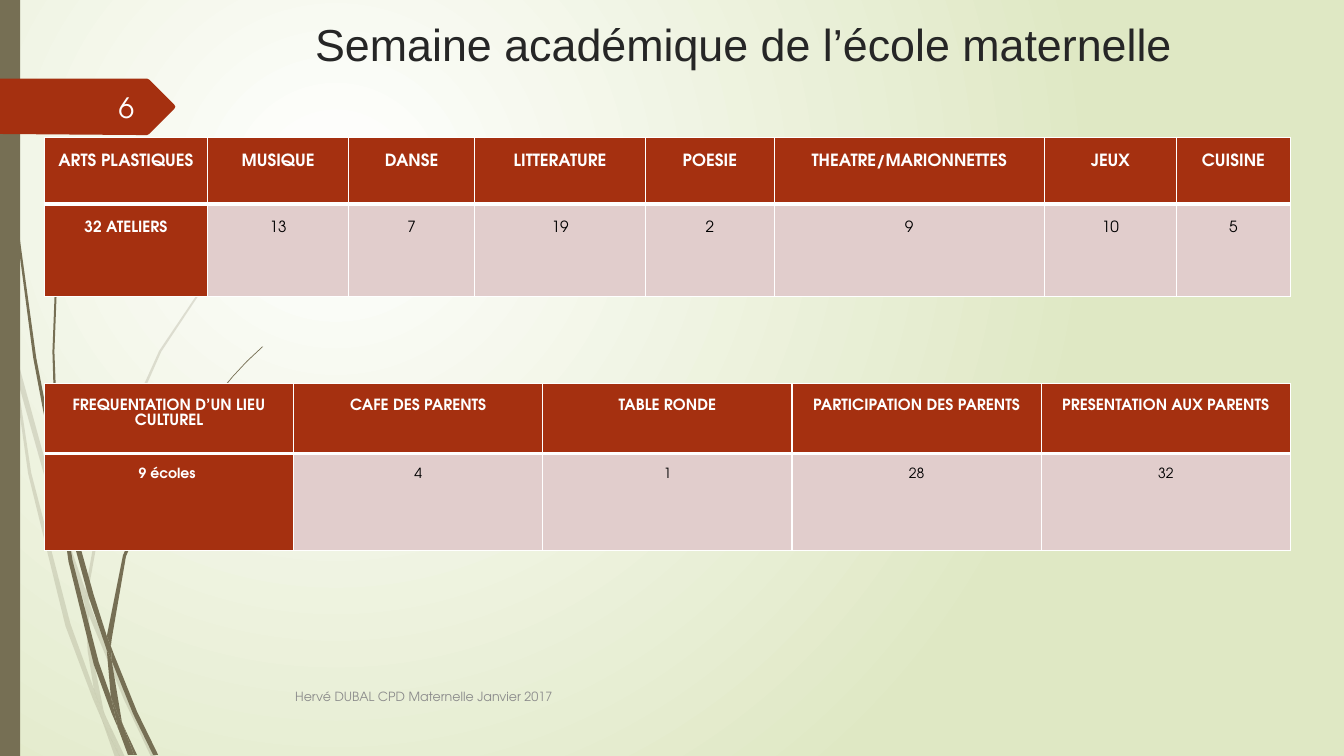
import pptx
import pptx.dml.color
import pptx.enum.shapes
import pptx.enum.text
import pptx.oxml
import pptx.oxml.ns
import pptx.util
from lxml import etree

Cm = pptx.util.Cm
Pt = pptx.util.Pt
RGBColor = pptx.dml.color.RGBColor
Shape = pptx.enum.shapes.MSO_SHAPE
Align = pptx.enum.text.PP_ALIGN
Anchor = pptx.enum.text.MSO_ANCHOR
qn = pptx.oxml.ns.qn

WHITE = RGBColor(0xFF, 0xFF, 0xFF)
BLACK = RGBColor(0, 0, 0)
INK = RGBColor(0x26, 0x26, 0x26)
GREY = RGBColor(0x8C, 0x8C, 0x8C)
RUST = RGBColor(0xA5, 0x30, 0x10)
ROSE = RGBColor(0xE1, 0xCD, 0xCC)
MOSS = RGBColor(0x76, 0x6F, 0x54)
LIME = RGBColor(0xDF, 0xE8, 0xC4)

FONT = "TeX Gyre Adventor"
STEP = Cm(0.0254)

# Outlines of the grass blades and the page tag, in units of STEP
PALE = [
    [(11, 350), (9, 322), (0, 282), (0, 299), (10, 344)],
    [(58, 522), (84, 599), (85, 586), (62, 520), (14, 345), (17, 376)],
    [(92, 607), (88, 596), (88, 610), (123, 694), (150, 751), (155, 751),
     (127, 692)],
    [(119, 751), (124, 751), (105, 711)],
    [(93, 683), (70, 619), (31, 469), (17, 376), (11, 350), (28, 470),
     (65, 621), (92, 693), (101, 714), (99, 707)],
    [(84, 599), (87, 646), (93, 683), (96, 692), (105, 711), (103, 706),
     (91, 646), (88, 610), (88, 608)],
    [(88, 584), (110, 462), (160, 349), (229, 245), (268, 198), (290, 175),
     (312, 154), (312, 153), (289, 175), (268, 197), (228, 244), (158, 348),
     (107, 461), (85, 584), (85, 586), (88, 596)],
    [(101, 714), (114, 751), (119, 751)],
    [(88, 608), (88, 610), (88, 596), (85, 586), (84, 599)],
    [(96, 692), (93, 683), (99, 707), (101, 714), (119, 751), (105, 711)],
]
DARK = [
    [(7, 110), (17, 233), (33, 355), (56, 477), (57, 481), (55, 457),
     (55, 453), (36, 355), (19, 232), (8, 109), (5, 48), (4, 0), (3, 0),
     (4, 48)],
    [(88, 592), (106, 645), (106, 633), (106, 631), (93, 590), (60, 472),
     (64, 505)],
    [(113, 649), (110, 641), (111, 656), (132, 708), (152, 749), (157, 749),
     (136, 706)],
    [(110, 691), (98, 657), (72, 556), (64, 505), (57, 477), (68, 557),
     (93, 659), (111, 708), (117, 722), (116, 717)],
    [(60, 472), (58, 453), (54, 349), (58, 245), (63, 193), (70, 141),
     (62, 193), (56, 245), (52, 349), (55, 449)],
    [(133, 749), (136, 749), (122, 719)],
    [(57, 477), (64, 505), (60, 472), (55, 449), (55, 453)],
    [(111, 633), (125, 552), (158, 476), (205, 406), (231, 374), (245, 359),
     (261, 344), (260, 344), (245, 358), (231, 373), (204, 405), (156, 474),
     (122, 551), (106, 631), (110, 641)],
    [(117, 722), (127, 749), (131, 749)],
    [(106, 645), (110, 691), (116, 706), (122, 719), (121, 716), (111, 656),
     (109, 651)],
    [(106, 645), (109, 651), (111, 656), (110, 641), (106, 631), (106, 633)],
    [(116, 706), (110, 691), (116, 717), (117, 722), (130, 749), (133, 749),
     (122, 719)],
]
TAG = [(173, 108), (148, 133), (146, 134), (136, 134), (0, 133), (0, 78),
       (136, 78), (146, 78), (148, 79), (173, 104), (174, 106)]

WORKS = [["ARTS PLASTIQUES", "MUSIQUE", "DANSE", "LITTERATURE", "POESIE",
          "THEATRE/MARIONNETTES", "JEUX", "CUISINE"],
         ["32 ATELIERS", "13", "7", "19", "2", "9", "10", "5"]]
MEETS = [["FREQUENTATION D’UN LIEU CULTUREL", "CAFE DES PARENTS",
          "TABLE RONDE", "PARTICIPATION DES PARENTS",
          "PRESENTATION AUX PARENTS"],
         ["9 écoles ", "4", "1", "28", "32"]]


def write(frame, text, size=12, color=BLACK, font=FONT, bold=False,
          align=Align.LEFT, lead=None):
    frame.word_wrap = True
    para = frame.paragraphs[0]
    para.alignment = align
    para.line_spacing = lead
    run = para.add_run()
    run.text = text
    run.font.size = Pt(size)
    run.font.name = font
    run.font.bold = bold
    run.font.color.rgb = color


class Deck:
    def __init__(self):
        self.show = pptx.Presentation()
        self.show.slide_width = Cm(33.87)
        self.show.slide_height = Cm(19.05)
        self.slide = self.show.slides.add_slide(self.show.slide_layouts[6])
        self.items = self.slide.shapes

    def glow(self, inner, outer):
        """Radial gradient on the slide background."""
        fill = self.slide.background.fill
        fill.gradient()
        for stop, color, place in zip(fill.gradient_stops, (inner, outer),
                                      (0, 1)):
            stop.color.rgb = color
            stop.position = place
        grad = self.slide.element.find(".//" + qn("a:gradFill"))
        grad.remove(grad.find(qn("a:lin")))
        ring = etree.SubElement(grad, qn("a:path"), {"path": "circle"})
        etree.SubElement(ring, qn("a:fillToRect"), {
            "l": "50000", "t": "50000", "r": "100000", "b": "100000"})

    def paint(self, shape, color, alpha=100):
        shape.shadow.inherit = False
        shape.fill.solid()
        shape.fill.fore_color.rgb = color
        shape.line.fill.background()
        if alpha < 100:
            tint = shape.fill._xPr.find(".//" + qn("a:srgbClr"))
            etree.SubElement(tint, qn("a:alpha"), val=str(alpha * 1000))

    def block(self, x, y, w, h, color):
        shape = self.items.add_shape(Shape.RECTANGLE, Cm(x), Cm(y), Cm(w),
                                     Cm(h))
        self.paint(shape, color)

    def outline(self, rim, color, alpha=100):
        pen = self.items.build_freeform(*rim[0], scale=STEP)
        pen.add_line_segments(rim[1:], close=True)
        self.paint(pen.convert_to_shape(), color, alpha)

    def label(self, text, x, y, w, h, anchor=Anchor.MIDDLE, **style):
        frame = self.items.add_textbox(Cm(x), Cm(y), Cm(w), Cm(h)).text_frame
        frame.vertical_anchor = anchor
        write(frame, text, **style)

    def edge(self, cell, **sides):
        """White cell borders, widths in points."""
        props = cell._tc.get_or_add_tcPr()
        for side in "LRTB":
            line = etree.SubElement(props, qn("a:ln" + side),
                                    w=str(Pt(sides.get(side, 1))))
            fill = etree.SubElement(line, qn("a:solidFill"))
            etree.SubElement(fill, qn("a:srgbClr"), val=str(WHITE))

    def table(self, rows, y, wides, highs, sizes, pad):
        table = self.items.add_table(
            len(rows), len(wides), Cm(1.12), Cm(y),
            Cm(sum(wides)), Cm(sum(highs))).table
        table.horz_banding = False
        for col, wide in zip(table.columns, wides):
            col.width = Cm(wide)
        for r, row in enumerate(rows):
            table.rows[r].height = Cm(highs[r])
            for c, text in enumerate(row):
                cell = table.cell(r, c)
                head = r == 0 or c == 0
                self.edge(cell, **({"T": 3} if r else {"B": 3}))
                cell.fill.solid()
                cell.fill.fore_color.rgb = RUST if head else ROSE
                cell.margin_left = cell.margin_right = Cm(0.18)
                cell.margin_top, cell.margin_bottom = Cm(pad), 0
                write(cell.text_frame, text, size=sizes[r], bold=head,
                      color=WHITE if head else BLACK, align=Align.CENTER,
                      lead=1.07)


def main():
    deck = Deck()
    deck.glow(WHITE, LIME)
    for blades, alpha in ((PALE, 20), (DARK, 100)):
        for rim in blades:
            deck.outline(rim, MOSS, alpha)
    deck.block(0, 0, 0.51, 19.05, MOSS)
    deck.outline(TAG, RUST)
    deck.label("Semaine académique de l’école maternelle", 4.27, 0.3, 28.96,
               1.9, anchor=Anchor.TOP, size=32, font="Arial", color=INK,
               align=Align.CENTER)
    deck.table(WORKS, 3.46, [4.11, 3.56, 3.17, 4.31, 3.24, 6.81, 3.33, 2.87],
               [1.68, 2.34], [12, 11], 0.4)
    deck.label("Hervé DUBAL CPD Maternelle Janvier 2017", 7.19, 17.04, 21.16,
               1.02, size=9, color=GREY)
    deck.label("6", 1.47, 2.2, 2.16, 1.02, size=20, color=WHITE,
               align=Align.RIGHT)
    deck.table(MEETS, 9.67, [6.28] * 5, [1.76, 2.44], [11, 10], 0.36)
    deck.show.save("out.pptx")


if __name__ == "__main__":
    main()
